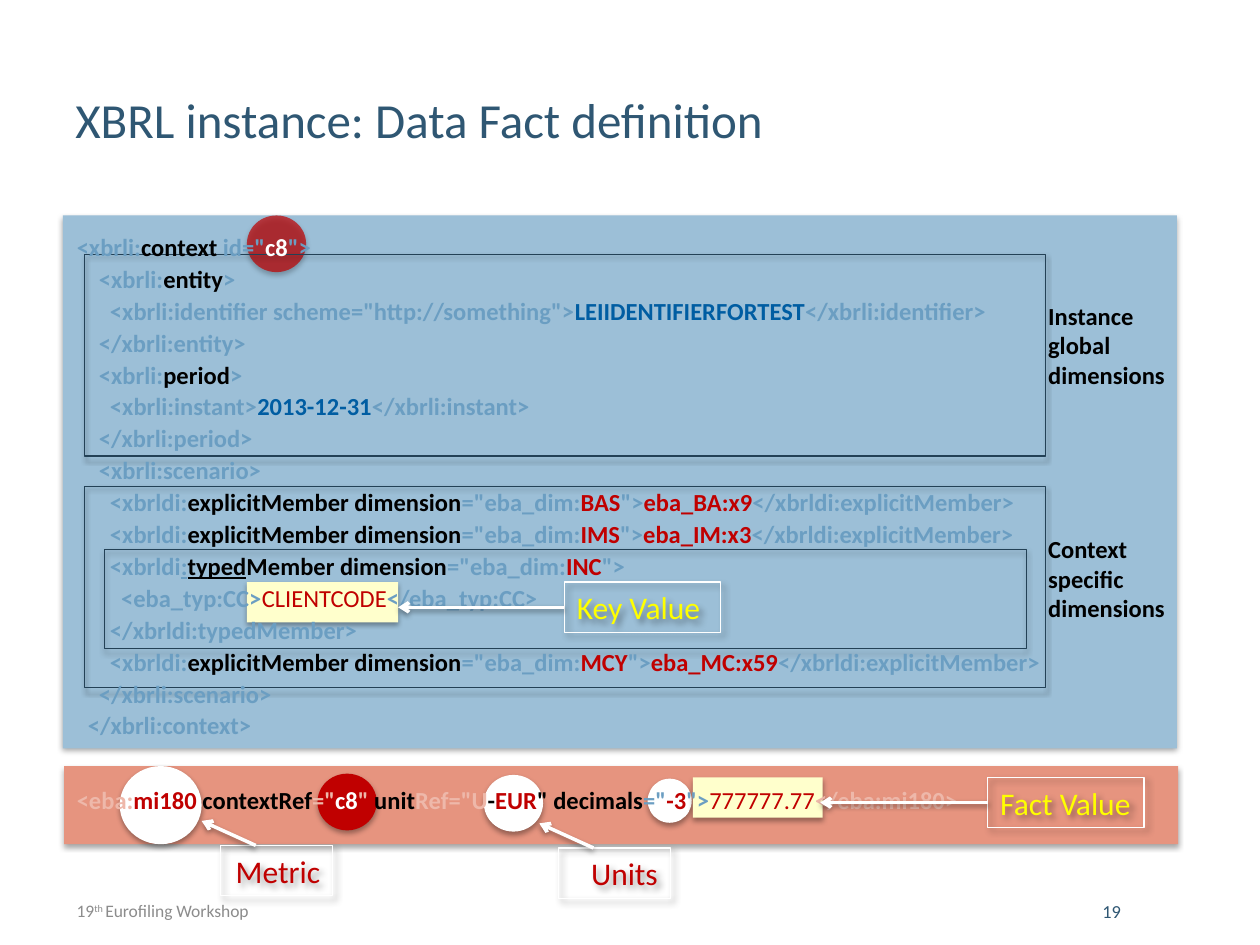
import pptx
import pptx.util
import pptx.dml.color
import pptx.enum.shapes
import pptx.enum.text
import pptx.oxml
import pptx.oxml.ns

SHAPE = pptx.enum.shapes.MSO_SHAPE
ALIGN = pptx.enum.text.PP_ALIGN
ANCHOR = pptx.enum.text.MSO_ANCHOR
WIDTH, HEIGHT = 10, 7.5
COLUMNS, ROWS = 100, 75
LINE_ROWS = 2.58

COLORS = {
    "navy": "2F5773", "gray": "8C8C8C", "frame": "234156", "sky": "9CBFD7",
    "salmon": "E6947F", "cream": "FFFFCC", "white": "FFFFFF", "red": "C00000",
    "black": "000000", "syntax": "6B9EC2", "blue": "005DA2", "pale": "EEB8AA",
    "yellow": "FFFF00",
}
SOFT = {"alpha": 35, "blur": 3.1, "dist": 1.8, "angle": 90}
DIAGONAL = {"alpha": 40, "blur": 4, "dist": 3, "angle": 45}
ARROW = {"alpha": 38, "blur": 3.1, "dist": 1.6, "angle": 90}
CODE = {"size": pptx.util.Pt(14), "bold": True}
CALLOUT = {"size": pptx.util.Pt(18)}
FRAME = {"word_wrap": True, "vertical_anchor": ANCHOR.MIDDLE}
TOP = {"vertical_anchor": ANCHOR.TOP}
CODE_FRAME = {**TOP, "margin_left": 0, "margin_right": 0, "margin_top": 0, "margin_bottom": 0}
CODE_LINE = {"line_spacing": 1.05, "space_after": pptx.util.Pt(0.6)}


def explicit_member(dimension, member):
    return [("      <xbrldi:", "syntax"), ("explicitMember dimension", "black"),
            ('="eba_dim:', "syntax"), (dimension, "red"), ('">', "syntax"),
            (member, "red"), ("</xbrldi:explicitMember>", "syntax")]


CONTEXT = [
    [("<xbrli:", "syntax"), ("context ", "black"), ('id="', "syntax"),
     ("c8", "white"), ('">', "syntax")],
    [("    <xbrli:", "syntax"), ("entity", "black"), (">", "syntax")],
    [('      <xbrli:identifier scheme="http://something">', "syntax"),
     ("LEIIDENTIFIERFORTEST", "blue"), ("</xbrli:identifier>", "syntax")],
    [("    </xbrli:entity>", "syntax")],
    [("    <xbrli:", "syntax"), ("period", "black"), (">", "syntax")],
    [("      <xbrli:instant>", "syntax"), ("2013-12-31", "blue"),
     ("</xbrli:instant>", "syntax")],
    [("    </xbrli:period>", "syntax")],
    [("    <xbrli:scenario>", "syntax")],
    explicit_member("BAS", "eba_BA:x9"),
    explicit_member("IMS", "eba_IM:x3"),
    [("      <xbrldi", "syntax"), (":", "syntax", {"underline": True}),
     ("typed", "black", {"underline": True}), ("Member dimension", "black"),
     ('="eba_dim:', "syntax"), ("INC", "red"), ('">', "syntax")],
    [("        <eba_typ:CC>", "syntax"), ("CLIENTCODE", "red", {"bold": False}),
     ("</eba_typ:CC>", "syntax")],
    [("      </xbrldi:typedMember>", "syntax")],
    explicit_member("MCY", "eba_MC:x59"),
    [("    </xbrli:scenario>", "syntax")],
    [("  </xbrli:context>", "syntax")],
]
FACT = [[
    ("<eba:", "pale"), ("mi180", "red"), (" contextRef", "black"), ('="', "pale"),
    ("c8", "white"), ('"', "pale"), (" unit", "black"), ('Ref="U', "pale"),
    ("-", "black"), ("EUR", "red"), ('" decimals', "black"), ('="', "syntax"),
    ("-3", "red"), ('">', "syntax"), ("777777.77", "red", {"bold": False}),
    ("</eba:mi180>", "pale"),
]]


def col(count):
    return pptx.util.Inches(count * WIDTH / COLUMNS)


def row(count):
    return pptx.util.Inches(count * HEIGHT / ROWS)


def place(area):
    left, top, width, height = area
    return col(left), row(top), col(width), row(height)


def rgb(name):
    return pptx.dml.color.RGBColor.from_string(COLORS[name])


def apply(target, values):
    for name, value in values.items():
        setattr(target, name, value)


def element(parent, tag, **attributes):
    child = pptx.oxml.parse_xml(f'<{tag} {pptx.oxml.ns.nsdecls("a")}/>')
    for name, value in attributes.items():
        child.set(name, str(value))
    parent.append(child)
    return child


def cast_shadow(properties, alpha, blur, dist, angle):
    effects = element(properties, "a:effectLst")
    outer = element(effects, "a:outerShdw", blurRad=pptx.util.Pt(blur),
                    dist=pptx.util.Pt(dist), dir=angle * 60000, algn="ctr", rotWithShape=0)
    element(element(outer, "a:srgbClr", val=COLORS["black"]), "a:alpha", val=alpha * 1000)


def add_panel(slide, area, fill=None, line=None, kind=SHAPE.RECTANGLE, shadow=SOFT, alpha=None):
    panel = slide.shapes.add_shape(kind, *place(area))
    if fill:
        panel.fill.solid()
        panel.fill.fore_color.rgb = rgb(fill)
    else:
        panel.fill.background()
    if alpha:
        color = panel._element.spPr.find(".//" + pptx.oxml.ns.qn("a:srgbClr"))
        element(color, "a:alpha", val=alpha * 1000)
    if line:
        panel.line.color.rgb = rgb(line)
        panel.line.width = pptx.util.Pt(0.75)
    else:
        panel.line.fill.background()
    cast_shadow(panel._element.spPr, **shadow)
    return panel


def write(shape, lines, font, frame=None, paragraph_format=None):
    text = shape.text_frame
    apply(text, {**FRAME, **(frame or {})})
    for index, parts in enumerate(lines):
        paragraph = text.add_paragraph() if index else text.paragraphs[0]
        apply(paragraph, {"alignment": ALIGN.LEFT, **(paragraph_format or {})})
        for words, color, *extra in parts:
            run = paragraph.add_run()
            run.text = words
            run.font.color.rgb = rgb(color)
            apply(run.font, {"name": "Calibri", **font, **(extra[0] if extra else {})})
    return shape


def add_words(slide, area, *content):
    return write(slide.shapes.add_textbox(*place(area)), *content)


def add_callout(slide, area, words, color, alignment=ALIGN.LEFT):
    callout = add_panel(slide, area, line="white", shadow=DIAGONAL)
    return write(callout, [[(words, color)]], CALLOUT, None, {"alignment": alignment})


def add_pointer(slide, start, end, source=None):
    pointer = slide.shapes.add_connector(
        pptx.enum.shapes.MSO_CONNECTOR.STRAIGHT,
        col(start[0]), row(start[1]), col(end[0]), row(end[1]))
    if source is not None:
        pointer.begin_connect(source, 1)
    pointer.line.color.rgb = rgb("white")
    pointer.line.width = pptx.util.Pt(2)
    element(pointer.line._get_or_add_ln(), "a:tailEnd", type="arrow")
    cast_shadow(pointer._element.spPr, **ARROW)


def add_heading_and_footer(slide):
    justified = {"alignment": ALIGN.JUSTIFY}
    add_words(slide, (5, 6.4, 72.9, 6.1), [[("XBRL instance: Data Fact definition", "navy")]],
              {"size": pptx.util.Pt(28)}, None, justified)
    footer = add_words(slide, (5.1, 71.1, 53.8, 2.4),
                       [[("19", "gray"), ("th ", "gray"), ("Eurofiling Workshop", "gray")]],
                       {"size": pptx.util.Pt(10)}, None, justified)
    ordinal = footer.text_frame.paragraphs[0].runs[1]
    ordinal._r.get_or_add_rPr().set("baseline", "30000")
    add_words(slide, (86.5, 71.1, 8.5, 2.4), [[("19", "navy")]],
              {"size": pptx.util.Pt(10.5)}, None, justified)


def main():
    deck = pptx.Presentation()
    deck.slide_width, deck.slide_height = col(COLUMNS), row(ROWS)
    slide = deck.slides.add_slide(deck.slide_layouts[6])

    add_panel(slide, (5.1, 60.8, 88.4, 6.2), "salmon")
    add_panel(slide, (5, 17.1, 88.4, 42.3), "sky")
    add_panel(slide, (19.6, 46.2, 12, 3.2), "cream")
    for area, fill, alpha in [
            ((9.5, 60.8, 6.5, 6.2), "white", None), ((38.4, 61.5, 4.7, 4.5), "white", None),
            ((51.4, 61.8, 3.5, 3.5), "white", None), ((19.6, 17.1, 4.7, 4.5), "red", 70),
            ((25.2, 61.4, 4.7, 4.5), "red", None)]:
        add_panel(slide, area, fill, kind=SHAPE.OVAL, alpha=alpha)
    add_heading_and_footer(slide)
    for area in [(6.7, 20.2, 76.3, 16), (6.7, 38.6, 76.3, 16), (8.3, 43.6, 73.2, 7.9)]:
        add_panel(slide, area, line="frame")
    add_panel(slide, (55, 61.7, 10.3, 3.2), "cream")
    for top, scope in [(23.4, "Instance global"), (41.9, "Context specific")]:
        words = [*scope.split(), "dimensions"]
        add_words(slide, (82.2, top, 15.1, 10.4), [[(word, "black")] for word in words], CODE, TOP)

    code_top = 18.3
    fact_top = code_top + (len(CONTEXT) + 1) * LINE_ROWS
    for top, lines in [(code_top, CONTEXT), (fact_top, FACT)]:
        add_words(slide, (6.1, top, 88, len(lines) * LINE_ROWS), lines, CODE, CODE_FRAME, CODE_LINE)

    key_value = add_callout(slide, (44.8, 46.2, 12.4, 4), "Key Value", "yellow")
    add_pointer(slide, (44.8, 48.2), (31.6, 48.2), key_value)
    fact_value = add_callout(slide, (78.4, 61.7, 12.4, 4), "Fact Value", "yellow")
    add_pointer(slide, (78.4, 63.7), (65.1, 63.7), fact_value)
    for left, top, words in [(17.5, 67.1, "Metric"), (44.3, 67.3, "Units")]:
        add_callout(slide, (left, top, 8.9, 4), words, "red", ALIGN.RIGHT)
        add_pointer(slide, (left + 2.8, top), (left - 1.5, top - 1.95))

    deck.save("out.pptx")


if __name__ == "__main__":
    main()
